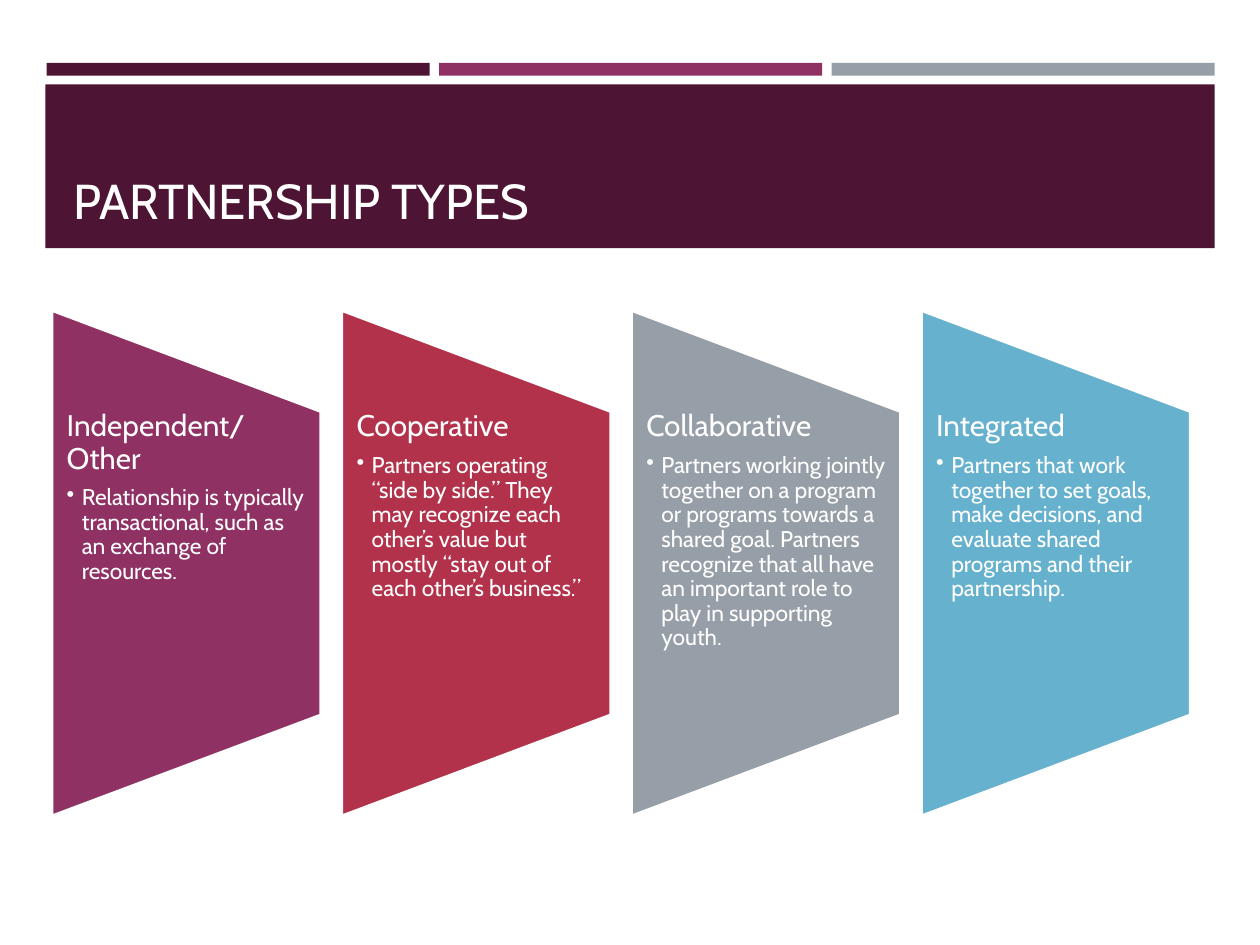
from lxml.etree import SubElement
from pptx import Presentation
from pptx.dml.color import RGBColor
from pptx.enum.shapes import MSO_SHAPE
from pptx.enum.text import MSO_ANCHOR, MSO_AUTO_SIZE, PP_ALIGN
from pptx.oxml.ns import qn
from pptx.util import Inches, Pt

PLUM, PURPLE, GRAY, RED, BLUE, WHITE = (
    "4D1434", "903163", "969FA7", "B2324B", "66B1CE", "FFFFFF")


def add_filled(kind, left, top, width, height, color):
    sp = s.shapes.add_shape(kind, Inches(left), Inches(top), Inches(width), Inches(height))
    sp.shadow.inherit = False
    sp.fill.solid()
    sp.fill.fore_color.rgb = RGBColor.from_string(color)
    sp.line.fill.background()
    return sp


def write(p, text, size):
    p.text = text
    p.alignment = PP_ALIGN.LEFT
    p.line_spacing = 0.9
    font = p.runs[0].font
    font.name, font.size = "Cabin", Pt(size)
    font.color.rgb = RGBColor.from_string(WHITE)


prs = Presentation()
prs.slide_width, prs.slide_height = Inches(10), Inches(7.5)
s = prs.slides.add_slide(prs.slide_layouts[5])

# Title band, with three bars above it
add_filled(MSO_SHAPE.RECTANGLE, 0.36, 0.67, 9.28, 1.3, PLUM)
for col, color in enumerate((PLUM, PURPLE, GRAY)):
    add_filled(MSO_SHAPE.RECTANGLE, 0.37 + col * 3.115, 0.5, 3.04, 0.1, color)

# Title, brought in front of the band
title = s.shapes.title
s.shapes._spTree.append(title._element)
title.left, title.top, title.width, title.height = (
    Inches(v) for v in (0.48, 0.77, 9.05, 1.11))
tf = title.text_frame
tf.auto_size = MSO_AUTO_SIZE.NONE
tf.vertical_anchor = MSO_ANCHOR.BOTTOM
write(tf.paragraphs[0], "PARTNERSHIP TYPES", 28)

# One tapered panel per partnership type
partnerships = [
    ("Independent/Other", PURPLE,
     "Relationship is typically transactional, such as an exchange of resources."),
    ("Cooperative", RED,
     "Partners operating “side by side.” They may recognize each other’s value "
     "but mostly “stay out of each other’s business.”"),
    ("Collaborative", GRAY,
     "Partners working jointly together on a program or programs towards a shared goal. "
     "Partners recognize that all have an important role to play in supporting youth."),
    ("Integrated", BLUE,
     "Partners that work together to set goals, make decisions, and evaluate shared "
     "programs and their partnership."),
]
panel_w, panel_h, panel_top, pitch = 2.14, 4.02, 2.46, 2.3
for col, (name, color, description) in enumerate(partnerships):
    left = 0.41 + col * pitch

    # Turned a quarter left, so width and height swap about the centre
    offset = (panel_h - panel_w) / 2
    panel = add_filled(MSO_SHAPE.FLOWCHART_MANUAL_OPERATION,
                       left - offset, panel_top + offset, panel_h, panel_w, color)
    panel.rotation = 270
    panel.line.color.rgb = RGBColor.from_string(WHITE)
    panel.line.width = Pt(2)

    # Text fills the middle three fifths of the panel
    box = s.shapes.add_textbox(Inches(left), Inches(panel_top + panel_h / 5),
                               Inches(panel_w), Inches(panel_h * 3 / 5))
    tf = box.text_frame
    tf.word_wrap = True
    tf.margin_left = tf.margin_right = Inches(0.12)
    tf.margin_top = tf.margin_bottom = 0
    write(tf.paragraphs[0], name, 17)
    tf.paragraphs[0].space_after = Pt(6)

    p = tf.add_paragraph()
    write(p, description, 13)
    p.level = 1
    pPr = p._p.get_or_add_pPr()
    pPr.set("marL", str(Inches(0.12)))
    pPr.set("indent", str(-Inches(0.12)))
    SubElement(pPr, qn("a:buChar"), char="•")

prs.save("out.pptx")
